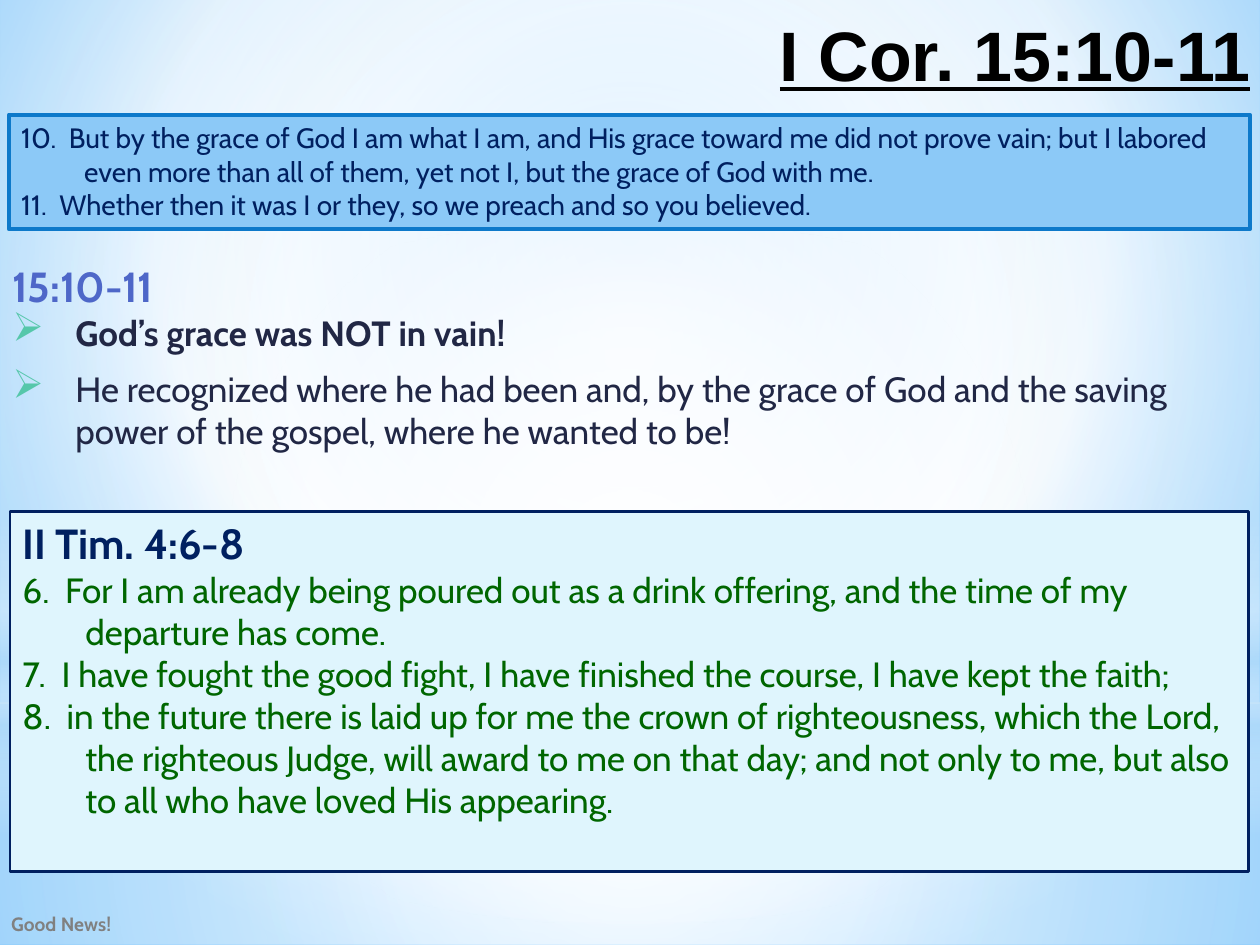
from dataclasses import dataclass

from lxml import etree
from pptx import Presentation
from pptx.dml.color import RGBColor
from pptx.enum.shapes import MSO_SHAPE
from pptx.enum.text import MSO_ANCHOR, PP_ALIGN
from pptx.oxml import parse_xml
from pptx.oxml.ns import nsdecls, qn
from pptx.util import Inches, Pt

RECTANGLE, ELLIPSE = MSO_SHAPE.RECTANGLE, MSO_SHAPE.OVAL
TOP, MIDDLE = MSO_ANCHOR.TOP, MSO_ANCHOR.MIDDLE
LEFT, RIGHT = PP_ALIGN.LEFT, PP_ALIGN.RIGHT
WIDTH, HEIGHT = 10, 7.5
HANGING = 0.5


@dataclass(frozen=True)
class Theme:
    title = dict(size=40, name="Arial", color="000000", bold=True, underline=True)
    heading = dict(size=24, name="Cabin", color="4E67C8", bold=True)
    point = dict(size=20, name="Cabin", color="212745")
    strong_point = dict(point, bold=True)
    verse = dict(size=16, name="Cabin", color="002060")
    passage_heading = dict(heading, color="002060")
    passage = dict(size=20, name="Cabin", color="006600")
    footer = dict(size=11, name="Cabin", color="808080", bold=True)
    bullet = "56C7AA"
    verse_panel = dict(fill="8CC9F7", line="0D79CA", weight=2.25)
    passage_panel = dict(fill="DFF5FD", line="002060", weight=1.5)
    white, haze = "FFFFFF", "B4DCFA"
    sky = [(0, "9ED5FF", 100), (60, white, 100), (100, "5BB9FF", 100)]
    lower_glow = [(0, white, 91), (37, white, 76), (100, haze, 79)]
    upper_glow = [(0, white, 89), (48, white, 62), (100, haze, 79)]
    horizon = [(0, white, 0), (29, white, 30), (45, haze, 40),
               (55, white, 26), (65, haze, 60), (100, white, 0)]
    halo = [(0, white, 100), (56, white, 0)]


THEME = Theme()
CENTRE = (50, 50, 50, 50)


def paint_gradient(fill, owner, stops, focus=None):
    """Fill with (percent, colour, opacity) stops, round a focus or top to bottom."""
    colours = "".join(
        f'<a:gs pos="{place * 1000}"><a:srgbClr val="{colour}">'
        f'<a:alpha val="{opacity * 1000}"/></a:srgbClr></a:gs>'
        for place, colour, opacity in stops)
    if focus:
        left, top, right, bottom = (share * 1000 for share in focus)
        course = (f'<a:path path="circle"><a:fillToRect l="{left}" t="{top}" '
                  f'r="{right}" b="{bottom}"/></a:path>')
    else:
        course = '<a:lin ang="5400000" scaled="0"/>'
    fill.background()
    blank = owner.xpath(".//a:noFill")[0]
    blank.getparent().replace(blank, parse_xml(
        f'<a:gradFill {nsdecls("a")} rotWithShape="1"><a:gsLst>{colours}</a:gsLst>'
        f'{course}</a:gradFill>'))


def add_backdrop(page):
    paint_gradient(page.background.fill, page._element, THEME.sky, (20, 10, 20, 60))
    split = 5.58
    layers = [
        (RECTANGLE, split, HEIGHT - split, THEME.lower_glow, CENTRE),
        (RECTANGLE, 0, split, THEME.upper_glow, CENTRE),
        (RECTANGLE, HEIGHT * 0.55, HEIGHT / 3, THEME.horizon, None),
        (ELLIPSE, 1.75, split, THEME.halo, CENTRE),
    ]
    for kind, top, height, stops, focus in layers:
        layer = page.shapes.add_shape(
            kind, 0, Inches(top), Inches(WIDTH), Inches(height))
        layer.shadow.inherit = False
        paint_gradient(layer.fill, layer._element, stops, focus)
        layer.line.fill.background()


def add_bullet(para):
    props = para._p.get_or_add_pPr()
    colour = etree.SubElement(props, qn("a:buClr"))
    etree.SubElement(colour, qn("a:srgbClr"), val=THEME.bullet)
    etree.SubElement(props, qn("a:buSzPct"), val="115000")
    etree.SubElement(props, qn("a:buChar"), char="➢")


def write(shape, lines, anchor=TOP, align=LEFT, hanging=HANGING):
    """Write (text, format, bulleted) lines, one paragraph each."""
    frame = shape.text_frame
    frame.word_wrap = True
    frame.vertical_anchor = anchor
    for number, (text, style, bulleted) in enumerate(lines):
        para = frame.paragraphs[0] if number == 0 else frame.add_paragraph()
        para.alignment = align
        if hanging:
            props = para._p.get_or_add_pPr()
            props.set("marL", str(Inches(hanging)))
            props.set("indent", str(-Inches(hanging)))
        if bulleted:
            add_bullet(para)
        span = para.add_run()
        span.text = text
        for key, value in style.items():
            if key == "color":
                span.font.color.rgb = RGBColor.from_string(value)
            else:
                setattr(span.font, key, Pt(value) if key == "size" else value)


def add_text(page, box, lines, **layout):
    shape = page.shapes.add_textbox(*map(Inches, box))
    write(shape, lines, **layout)
    return shape


def add_panel(page, box, lines, look):
    panel = page.shapes.add_shape(RECTANGLE, *map(Inches, box))
    panel.shadow.inherit = False
    panel.fill.solid()
    panel.fill.fore_color.rgb = RGBColor.from_string(look["fill"])
    panel.line.color.rgb = RGBColor.from_string(look["line"])
    panel.line.width = Pt(look["weight"])
    write(panel, lines)


def add_title(page, box):
    title = add_text(page, box, [("I Cor. 15:10-11", THEME.title, False)],
                     align=RIGHT, hanging=0)
    title.text_frame.margin_top = Inches(0.1)


def add_points(page, box):
    left, top, width, height = box
    first = 0.85
    add_text(page, (left, top, width, first), [
        ("15:10-11", THEME.heading, False),
        ("God’s grace was NOT in vain!", THEME.strong_point, True)])
    add_text(page, (left, top + first, width, height - first), [
        ("He recognized where he had been and, by the grace of God and the saving "
         "power of the gospel, where he wanted to be!", THEME.point, True)])


def add_verses(page, box):
    verses = [
        "10.  But by the grace of God I am what I am, and His grace toward me did not "
        "prove vain; but I labored even more than all of them, yet not I, but the "
        "grace of God with me.",
        "11.  Whether then it was I or they, so we preach and so you believed.",
    ]
    add_panel(page, box, [(verse, THEME.verse, False) for verse in verses],
              THEME.verse_panel)


def add_passage(page, box):
    verses = [
        "6.  For I am already being poured out as a drink offering, and the time of my "
        "departure has come.",
        "7.  I have fought the good fight, I have finished the course, I have kept the "
        "faith;",
        "8.  in the future there is laid up for me the crown of righteousness, which "
        "the Lord, the righteous Judge, will award to me on that day; and not only to "
        "me, but also to all who have loved His appearing.",
    ]
    add_panel(page, box, [("II Tim. 4:6-8", THEME.passage_heading, False)]
              + [(verse, THEME.passage, False) for verse in verses],
              THEME.passage_panel)


def add_footer(page, box):
    add_text(page, box, [("Good News!", THEME.footer, False)],
             anchor=MIDDLE, hanging=0)


def main():
    deck = Presentation()
    deck.slide_width, deck.slide_height = Inches(WIDTH), Inches(HEIGHT)
    page = deck.slides.add_slide(deck.slide_layouts[6])
    add_backdrop(page)
    add_footer(page, (-0.01, 7.16, 3.67, 0.34))
    add_title(page, (0.02, -0.01, WIDTH, 0.71))
    add_points(page, (0, 2.02, WIDTH, 1.62))
    add_verses(page, (0.07, 0.91, 9.85, 0.91))
    add_passage(page, (0.08, 4.06, 9.83, 2.86))
    deck.save("out.pptx")


if __name__ == "__main__":
    main()
